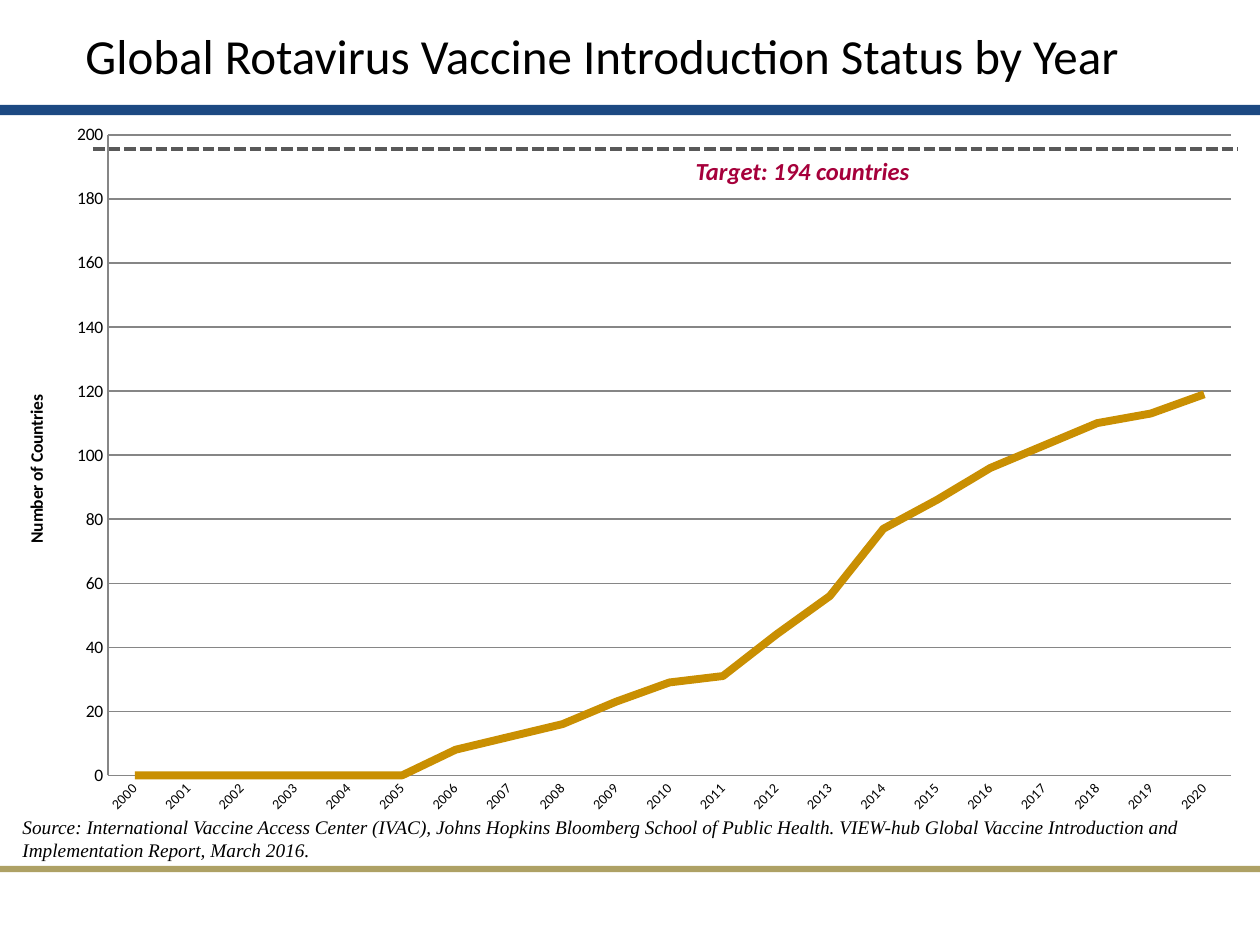
import lxml.etree
import pptx
import pptx.chart.data
import pptx.dml.color
import pptx.enum.chart
import pptx.enum.dml
import pptx.enum.shapes
import pptx.oxml
import pptx.oxml.ns
import pptx.util

WIDTH, HEIGHT = 10, 7.5
COLORS = {
    "text": "000000",
    "band": "1C4982",
    "rule": "847013",
    "series": "C98F02",
    "grid": "868686",
    "dash": "595959",
    "target": "A6003B",
}
COUNTRIES = [0] * 6 + [8, 12, 16, 23, 29, 31, 44, 56, 77, 86, 96, 103, 110, 113, 119]
YEARS = [str(2000 + step) for step in range(len(COUNTRIES))]
PLOT_SHARES = {"x": 0.086, "y": 0.034, "w": 0.894, "h": 0.893}


def color(name):
    """Return the named palette colour."""
    return pptx.dml.color.RGBColor.from_string(COLORS[name])


def within(box, left, top, width, height):
    """Return the part of a box given by shares of its size."""
    x, y, w, h = box
    return x + left * w, y + top * h, width * w, height * h


def lengths(box):
    """Convert a box in inches to slide lengths."""
    return [pptx.util.Inches(value) for value in box]


def style_font(font, size, name="Calibri", fill="text", bold=False, italic=False):
    """Set the face, size and colour of a font."""
    font.name, font.size = name, pptx.util.Pt(size)
    font.bold, font.italic = bold, italic
    font.color.rgb = color(fill)


def style_line(line, fill, width):
    """Set the colour and width of a line."""
    line.color.rgb = color(fill)
    line.width = pptx.util.Pt(width)


def add_text(page, box, text, size, **style):
    """Place a wrapped line of text in a box."""
    frame = page.shapes.add_textbox(*lengths(box)).text_frame
    frame.word_wrap = True
    frame.text = text
    style_font(frame.paragraphs[0].runs[0].font, size, **style)


def add_band(page, box, fill, opacity=100):
    """Place a plain horizontal band."""
    band = page.shapes.add_shape(
        pptx.enum.shapes.MSO_SHAPE.RECTANGLE, *lengths(box))
    band.shadow.inherit = False
    band.fill.solid()
    band.fill.fore_color.rgb = color(fill)
    band.line.fill.background()
    if opacity < 100:
        tint = band.fill._xPr.find(".//" + pptx.oxml.ns.qn("a:srgbClr"))
        lxml.etree.SubElement(
            tint, pptx.oxml.ns.qn("a:alpha"), val=str(opacity * 1000))


def add_header(page, box):
    """Place the title above its coloured band."""
    add_band(page, within(box, 0, 0.91, 1, 0.09), "band")
    add_text(page, within(box, 0.058, 0.165, 0.942, 1),
             "Global Rotavirus Vaccine Introduction Status by Year", 28)


def add_footer(page, box):
    """Place the source note above its rule."""
    add_band(page, within(box, 0, 0.9, 1, 0.1), "rule", opacity=65)
    add_text(page, within(box, 0.008, 0, 0.974, 0.94),
             "Source: International Vaccine Access Center (IVAC), Johns Hopkins "
             "Bloomberg School of Public Health. VIEW-hub Global Vaccine "
             "Introduction and Implementation Report, March 2016.",
             11, name="Times New Roman", italic=True)


def fix_plot_area(chart):
    """Pin the inner plot area to its shares of the chart."""
    area = chart._chartSpace.chart.plotArea
    for old in area.findall(pptx.oxml.ns.qn("c:layout")):
        area.remove(old)
    parts = "".join(f'<c:{key}Mode val="edge"/>' for key in "xy")
    parts += "".join(f'<c:{key} val="{share}"/>' for key, share in PLOT_SHARES.items())
    area.insert(0, pptx.oxml.parse_xml(
        f'<c:layout {pptx.oxml.ns.nsdecls("c")}><c:manualLayout>'
        f'<c:layoutTarget val="inner"/>{parts}</c:manualLayout></c:layout>'))


def style_axes(chart):
    """Set scale, labels, title and gridlines of both axes."""
    years, count = chart.category_axis, chart.value_axis
    for axis, size in ((years, 8), (count, 10)):
        axis.major_tick_mark = pptx.enum.chart.XL_TICK_MARK.NONE
        axis.minor_tick_mark = pptx.enum.chart.XL_TICK_MARK.NONE
        style_font(axis.tick_labels.font, size)
        style_line(axis.format.line, "grid", 0.75)
    years._element.txPr.find(pptx.oxml.ns.qn("a:bodyPr")).set("rot", "-2700000")
    count.minimum_scale, count.maximum_scale, count.major_unit = 0, 200, 20
    count.has_major_gridlines = True
    style_line(count.major_gridlines.format.line, "grid", 0.75)
    frame = count.axis_title.text_frame
    frame.text = "Number of Countries"
    style_font(frame.paragraphs[0].runs[0].font, 10, bold=True)


def add_trend_chart(page, box):
    """Place the line chart of countries by year."""
    data = pptx.chart.data.CategoryChartData()
    data.categories = YEARS
    data.add_series("Series 1", COUNTRIES)
    chart = page.shapes.add_chart(
        pptx.enum.chart.XL_CHART_TYPE.LINE, *lengths(box), data).chart
    chart.has_legend = chart.has_title = False
    style_font(chart.font, 10)
    chart.plots[0].vary_by_categories = False
    series = chart.plots[0].series[0]
    series.smooth = False
    series.marker.style = pptx.enum.chart.XL_MARKER_STYLE.NONE
    style_line(series.format.line, "series", 4.5)
    style_axes(chart)
    fix_plot_area(chart)


def add_target(page, box):
    """Place the dashed target line and its label over the chart."""
    left, top, width, _ = lengths(within(box, 0.074, 0.053, 0.911, 0))
    target = page.shapes.add_connector(
        pptx.enum.shapes.MSO_CONNECTOR.STRAIGHT, left, top, left + width, top)
    style_line(target.line, "dash", 2.25)
    target.line.dash_style = pptx.enum.dml.MSO_LINE.SQUARE_DOT
    lxml.etree.SubElement(
        target._element.spPr, pptx.oxml.ns.qn("a:effectLst"))
    add_text(page, within(box, 0.544, 0.055, 0.258, 0.058),
             "Target: 194 countries", 14, fill="target", bold=True, italic=True)


def main():
    """Build and save the slide."""
    deck = pptx.Presentation()
    deck.slide_width, deck.slide_height = lengths((WIDTH, HEIGHT))
    page = deck.slides.add_slide(deck.slide_layouts[6])
    slide = (0, 0, WIDTH, HEIGHT)
    chart_box = within(slide, 0, 0.117, 0.997, 0.759)
    add_header(page, within(slide, 0, 0, 1, 0.122))
    add_footer(page, within(slide, 0, 0.856, 1, 0.067))
    add_trend_chart(page, chart_box)
    add_target(page, chart_box)
    deck.save("out.pptx")


if __name__ == "__main__":
    main()
